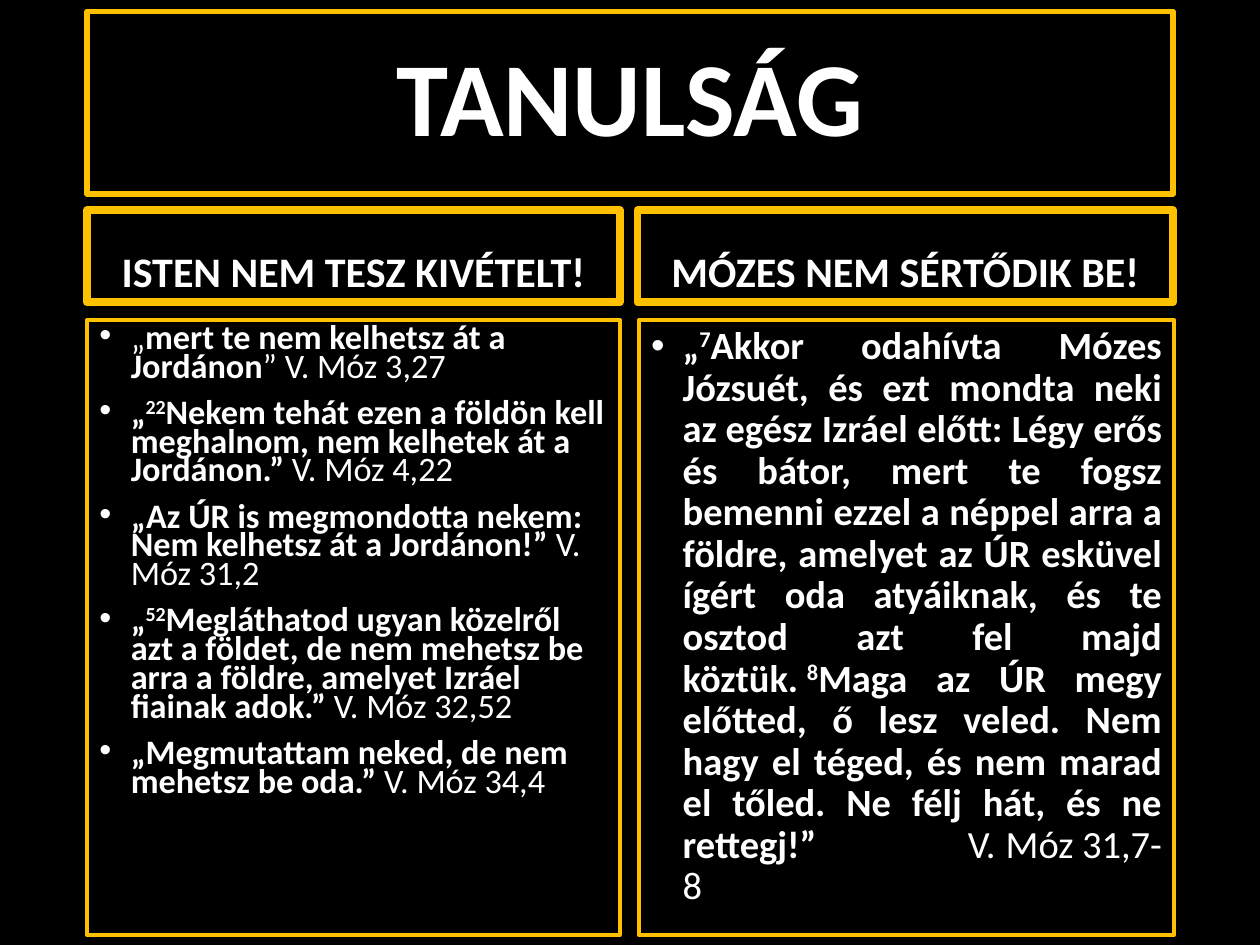
from lxml.etree import SubElement
from pptx import Presentation
from pptx.dml.color import RGBColor
from pptx.enum.shapes import MSO_SHAPE
from pptx.enum.text import MSO_ANCHOR as Anchor, PP_ALIGN as Align
from pptx.oxml.ns import qn
from pptx.util import Inches, Pt

COLORS = {"background": "000000", "text": "FFFFFF", "border": "FFC000"}
FONT = "Calibri"
HARD_SPACE = chr(160)  # keeps two words on one line

# Each paragraph is a list of (text, style) spans.
TITLE = [[("TANULSÁG", "bold")]]
COLUMNS = [
    {
        "heading": [[("ISTEN NEM TESZ KIVÉTELT!", "bold")]],
        "verses": [
            [("„", "plain"), ("mert te nem kelhetsz át a Jordánon", "bold"),
             ("” V. Móz 3,27", "plain")],
            [("„", "bold"), ("22", "super"),
             ("Nekem tehát ezen a földön kell meghalnom, nem kelhetek át a "
              "Jordánon.” ", "bold"),
             ("V. Móz 4,22", "plain")],
            [("„Az ÚR is megmondotta nekem: Nem kelhetsz át a Jordánon!” ", "bold"),
             ("V. Móz 31,2", "plain")],
            [("„", "bold"), ("52", "super"),
             ("Megláthatod ugyan közelről azt a földet, de nem mehetsz be arra a "
              "földre, amelyet Izráel fiainak adok.” ", "bold"),
             ("V. Móz 32,52", "plain")],
            [("„Megmutattam neked, de nem mehetsz be oda.” ", "bold"),
             ("V. Móz 34,4", "plain")],
        ],
        "left": 0.69, "verses_left": 0.69, "width": 4.23,
        "size": 19.6, "align": Align.LEFT, "line_spacing": 0.7,
    },
    {
        "heading": [[("MÓZES NEM SÉRTŐDIK BE!", "bold")]],
        "verses": [
            [("„", "bold"), ("7", "super"),
             (f"Akkor odahívta Mózes Józsuét, és ezt mondta neki az{HARD_SPACE}egész "
              "Izráel előtt: Légy erős és bátor, mert te fogsz bemenni ezzel a "
              "néppel arra a földre, amelyet az ÚR esküvel ígért oda atyáiknak, és "
              f"te osztod azt fel majd köztük.{HARD_SPACE}", "bold"),
             ("8", "super"),
             ("Maga az ÚR megy előtted, ő lesz veled. Nem hagy el téged, és nem "
              "marad el tőled. Ne félj hát, és ne rettegj!” \t\t\t", "bold"),
             (f"V. Móz{HARD_SPACE}31,7-8", "plain")],
        ],
        "left": 5.06, "verses_left": 5.07, "width": 4.25,
        "size": 22, "align": Align.JUSTIFY, "line_spacing": 0.9,
    },
]


def color(name):
    return RGBColor.from_string(COLORS[name])


def add_bullet(para):
    properties = para._p.get_or_add_pPr()
    properties.set("marL", str(Inches(0.25)))
    properties.set("indent", str(-Inches(0.25)))
    SubElement(properties, qn("a:buFont"), typeface="Arial")
    SubElement(properties, qn("a:buChar"), char="•")


def add_framed_text(page, place, border, paragraphs, size, anchor,
                    align=Align.CENTER, line_spacing=0.9, before=10, bullets=False):
    box = page.shapes.add_shape(MSO_SHAPE.RECTANGLE, *map(Inches, place))
    box.shadow.inherit = False
    box.fill.background()
    box.line.color.rgb = color("border")
    box.line.width = Pt(border)
    frame = box.text_frame
    frame.word_wrap = True
    frame.vertical_anchor = anchor
    for index, spans in enumerate(paragraphs):
        para = frame.add_paragraph() if index else frame.paragraphs[0]
        para.alignment = align
        para.line_spacing = line_spacing
        para.space_before = Pt(before)
        if bullets:
            add_bullet(para)
        para.font.name = FONT
        para.font.size = Pt(size)
        para.font.color.rgb = color("text")
        for text, style in spans:
            span = para.add_run()
            span.text = text
            span.font.bold = style != "plain"
            if style == "super":
                span._r.get_or_add_rPr().set("baseline", "30000")


def main():
    deck = Presentation()
    deck.slide_width, deck.slide_height = Inches(10), Inches(7.5)
    page = deck.slides.add_slide(deck.slide_layouts[6])
    page.background.fill.solid()
    page.background.fill.fore_color.rgb = color("background")

    add_framed_text(page, (0.69, 0.09, 8.62, 1.45), 3, TITLE, 60,
                    Anchor.MIDDLE, before=0)
    for column in COLUMNS:
        width = column["width"]
        add_framed_text(page, (column["left"], 1.67, width, 0.73), 4.5,
                        column["heading"], 24, Anchor.BOTTOM)
        add_framed_text(page, (column["verses_left"], 2.54, width, 4.88), 2.25,
                        column["verses"], column["size"], Anchor.TOP,
                        column["align"], column["line_spacing"], bullets=True)
    deck.save("out.pptx")


if __name__ == "__main__":
    main()
